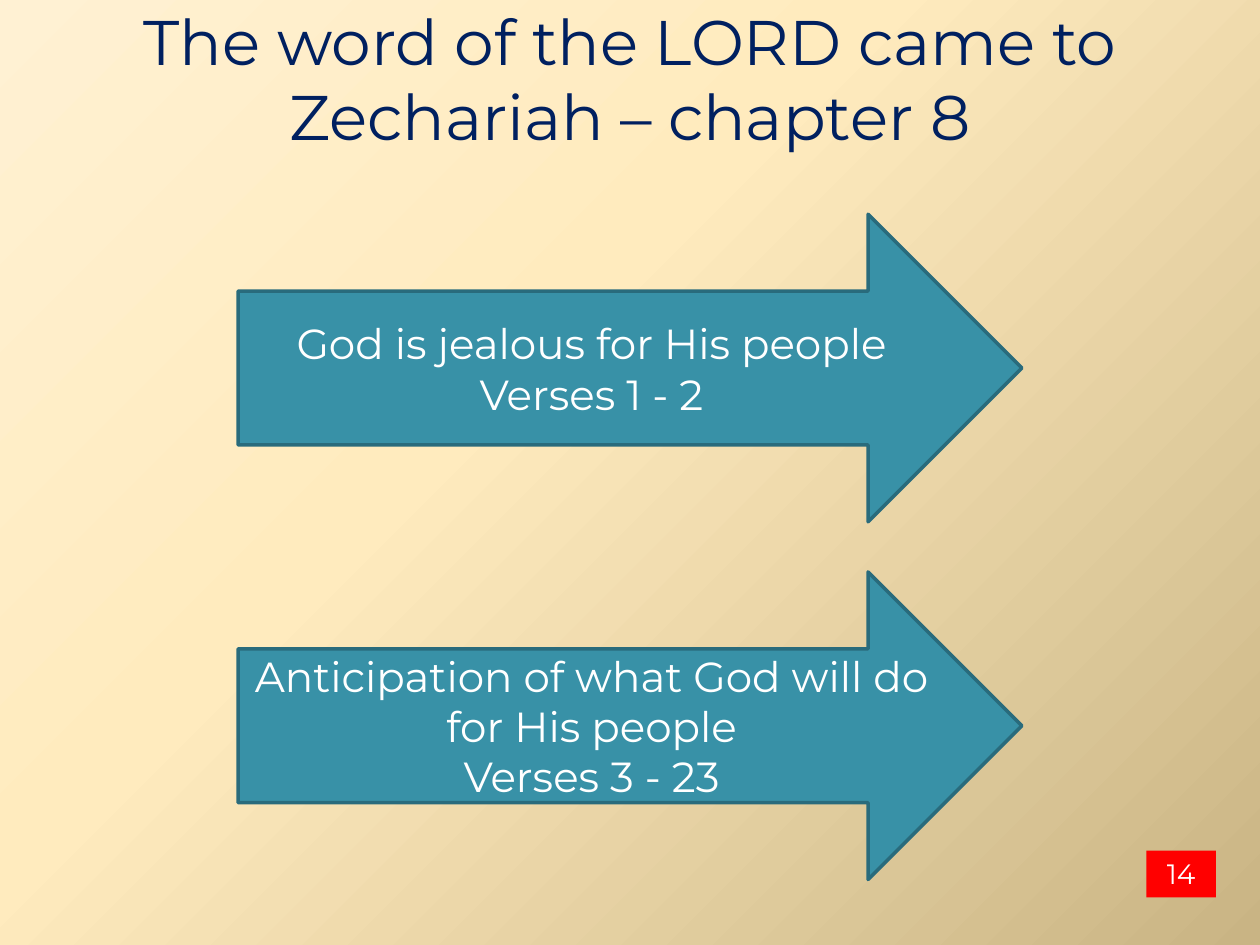
from lxml.etree import fromstring
from pptx import Presentation
from pptx.dml.color import RGBColor
from pptx.enum.shapes import MSO_SHAPE
from pptx.enum.text import MSO_ANCHOR, PP_ALIGN
from pptx.oxml.ns import nsdecls, qn
from pptx.util import Cm, Pt

FONT = "Montserrat"
NAVY = RGBColor(0x00, 0x20, 0x60)
TEAL = RGBColor(0x38, 0x91, 0xA7)
DARK_TEAL = RGBColor(0x29, 0x6B, 0x7C)
RED = RGBColor(0xFF, 0x00, 0x00)
WHITE = RGBColor(0xFF, 0xFF, 0xFF)
CREAM = RGBColor(0xFF, 0xF1, 0xD3)
SAND = RGBColor(0xFF, 0xEB, 0xBE)
KHAKI = RGBColor(0xC9, 0xB4, 0x84)

BACKDROP_STOPS = [(0, CREAM), (40, SAND), (100, KHAKI)]
ARROW_TEXTS = [
    "God is jealous for His people\nVerses 1 - 2",
    "Anticipation of what God will do for His people\nVerses 3 - 23",
]


def paint_backdrop(slide):
    """Fill the slide with a circular gradient centred beyond the top left."""
    slide.background.fill.solid()
    solid = slide.element.find(".//" + qn("p:bgPr")).find(qn("a:solidFill"))
    stops = "".join(
        f'<a:gs pos="{percent * 1000}"><a:srgbClr val="{color}"/></a:gs>'
        for percent, color in BACKDROP_STOPS
    )
    gradient = fromstring(
        f'<a:gradFill {nsdecls("a")} rotWithShape="1"><a:gsLst>{stops}</a:gsLst>'
        '<a:path path="circle"><a:fillToRect l="-24000" t="-20000" r="124000" b="120000"/>'
        "</a:path></a:gradFill>"
    )
    solid.getparent().replace(solid, gradient)


def write_text(shape, text, size, color, anchor):
    """Set centred, wrapped text in one size and colour."""
    frame = shape.text_frame
    frame.text = text
    frame.word_wrap = True
    frame.vertical_anchor = anchor
    for para in frame.paragraphs:
        para.alignment = PP_ALIGN.CENTER
        for span in para.runs:
            span.font.name = FONT
            span.font.size = Pt(size)
            span.font.color.rgb = color


def add_filled_shape(slide, kind, box, color):
    """Add a flat shape without an outline."""
    shape = slide.shapes.add_shape(kind, *box)
    shape.shadow.inherit = False
    shape.fill.solid()
    shape.fill.fore_color.rgb = color
    shape.line.fill.background()
    return shape


def add_title(slide, box):
    """Place the slide title."""
    title = slide.shapes.add_textbox(*box)
    write_text(title, "The word of the LORD came to Zechariah – chapter 8",
               36, NAVY, MSO_ANCHOR.TOP)


def add_arrows(slide, box, gap):
    """Stack one arrow per text in the box, with equal gaps."""
    left, top, width, height = box
    count = len(ARROW_TEXTS)
    arrow_height = (height - gap * (count - 1)) // count
    for index, text in enumerate(ARROW_TEXTS):
        arrow_top = top + index * (arrow_height + gap)
        arrow = add_filled_shape(slide, MSO_SHAPE.RIGHT_ARROW,
                                 (left, arrow_top, width, arrow_height), TEAL)
        arrow.line.color.rgb = DARK_TEAL
        arrow.line.width = Pt(2)
        write_text(arrow, text, 24, WHITE, MSO_ANCHOR.MIDDLE)


def add_page_number(slide, box):
    """Place the red page number badge."""
    badge = add_filled_shape(slide, MSO_SHAPE.RECTANGLE, box, RED)
    write_text(badge, "14", 16, WHITE, MSO_ANCHOR.TOP)


def main():
    """Build and save the slide."""
    deck = Presentation()
    deck.slide_width, deck.slide_height = Cm(25.4), Cm(19.05)
    slide = deck.slides.add_slide(deck.slide_layouts[6])
    paint_backdrop(slide)
    add_title(slide, (Cm(0), Cm(-0.08), Cm(25.4), Cm(3.33)))
    add_arrows(slide, (Cm(4.8), Cm(4.32), Cm(15.8), Cm(13.41)), Cm(1.01))
    add_page_number(slide, (Cm(23.11), Cm(17.15), Cm(1.4), Cm(0.94)))
    deck.save("out.pptx")


if __name__ == "__main__":
    main()
